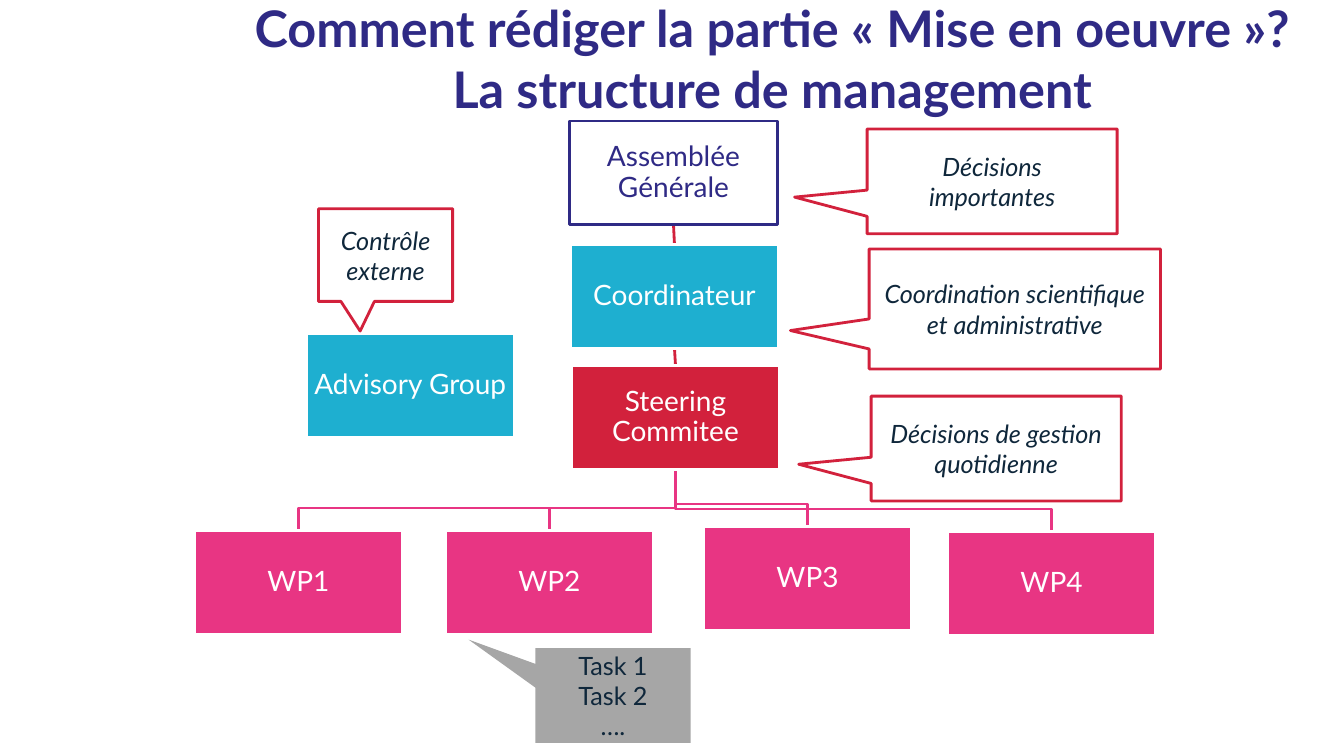
from pptx import Presentation
from pptx.dml.color import RGBColor
from pptx.enum.shapes import MSO_CONNECTOR as LINK, MSO_SHAPE as SHAPE
from pptx.enum.text import MSO_ANCHOR as ANCHOR, MSO_AUTO_SIZE as FIT, PP_ALIGN as ALIGN
from pptx.oxml.ns import qn
from pptx.util import Pt
from lxml.etree import SubElement

PX = 9144
FONT = "Lato"
WHITE = RGBColor(0xFF, 0xFF, 0xFF)
NAVY = RGBColor(0x2F, 0x2A, 0x85)
INK = RGBColor(0x0F, 0x27, 0x3B)
BLUE = RGBColor(0x1E, 0xAF, 0xD0)
RED = RGBColor(0xD2, 0x21, 0x3C)
PINK = RGBColor(0xE8, 0x35, 0x83)
GREY = RGBColor(0xA6, 0xA6, 0xA6)

BOX_W, BOX_H = 206, 103
DROP = 22


def px(*nums):
    return [n * PX for n in nums]


def write(shape, *lines, size=18, color=INK, bold=False, italic=False,
          space=1.0, inset=(10, 5)):
    frame = shape.text_frame
    frame.word_wrap = True
    frame.auto_size = FIT.NONE
    frame.vertical_anchor = ANCHOR.MIDDLE
    frame.margin_left = frame.margin_right = inset[0] * PX
    frame.margin_top = frame.margin_bottom = inset[1] * PX
    frame.text = "\n".join(lines)
    for para in frame.paragraphs:
        para.alignment = ALIGN.CENTER
        para.line_spacing = space
        para.space_before = para.space_after = Pt(0)
        for run in para.runs:
            font = run.font
            font.name, font.size = FONT, Pt(size)
            font.bold, font.italic = bold, italic
            font.color.rgb = color


def paint(shape, fill, edge):
    shape.shadow.inherit = False
    shape.fill.solid()
    shape.fill.fore_color.rgb = fill
    if edge is None:
        shape.line.fill.background()
    else:
        shape.line.color.rgb = edge
        shape.line.width = Pt(2)


def send_back(shape):
    shape.element.getparent().insert(2, shape.element)


def add_title(slide, left, top, width, height):
    title = slide.shapes.title
    title.left, title.top, title.width, title.height = px(left, top, width, height)
    write(title, "Comment rédiger la partie « Mise en oeuvre »?",
          "La structure de management", size=36, color=NAVY, bold=True)


def add_box(slide, left, top, label, fill, edge=WHITE, color=WHITE):
    box = slide.shapes.add_shape(SHAPE.RECTANGLE, *px(left, top, BOX_W, BOX_H))
    paint(box, fill, edge)
    write(box, label, size=20, color=color, space=0.9, inset=(1, 1))
    return box


def add_note(slide, area, tip, *lines, fill=WHITE, edge=RED, italic=True):
    note = slide.shapes.add_shape(SHAPE.RECTANGULAR_CALLOUT, *px(*area))
    note.adjustments[0], note.adjustments[1] = tip
    paint(note, fill, edge)
    write(note, *lines, italic=italic)


def join(slide, upper, lower):
    line = slide.shapes.add_connector(LINK.STRAIGHT, 0, 0, 0, 0)
    line.begin_connect(upper, 2)
    line.end_connect(lower, 0)
    line.line.color.rgb = RED
    line.line.width = Pt(2)
    SubElement(line.element.spPr, qn("a:effectLst"))
    send_back(line)


def branch(slide, upper, lower):
    start = upper.left + upper.width // 2
    end = lower.left + lower.width // 2
    bend = lower.top - DROP * PX
    path = slide.shapes.build_freeform(start, upper.top + upper.height)
    path.add_line_segments([(start, bend), (end, bend), (end, lower.top)], close=False)
    line = path.convert_to_shape()
    line.shadow.inherit = False
    line.fill.background()
    line.line.color.rgb = PINK
    line.line.width = Pt(2)
    send_back(line)


def add_chart_tree(slide, left, top):
    add_box(slide, left + 111, top + 211, "Advisory Group", BLUE)
    lead = add_box(slide, left + 373, top + 123, "Coordinateur", BLUE)
    board = add_box(slide, left + 372, top, "Assemblée Générale", WHITE, NAVY, NAVY)
    steer = add_box(slide, left + 374, top + 243, "Steering Commitee", RED)
    join(slide, board, lead)
    join(slide, lead, steer)
    spots = [(0, 406), (249, 406), (505, 402), (747, 407)]
    for num, (x, y) in enumerate(spots, 1):
        pack = add_box(slide, left + x, top + y, f"WP{num}", PINK)
        branch(slide, steer, pack)


def add_notes(slide):
    side = (-0.79, 0.15)
    add_note(slide, (316, 207, 133, 92), (-0.19, 0.82), "Contrôle externe")
    add_note(slide, (860, 128, 248, 104), side, "Décisions importantes")
    add_note(slide, (862, 247, 289, 119), (-0.77, 0.18),
             "Coordination scientifique et administrative")
    add_note(slide, (864, 393, 248, 104), side, "Décisions de gestion quotidienne")
    add_note(slide, (531, 643, 154, 94), (-0.93, -0.59), "Task 1", "Task 2", "….",
             fill=GREY, edge=None, italic=False)


def main():
    deck = Presentation()
    deck.slide_width, deck.slide_height = px(1333, 750)
    slide = deck.slides.add_slide(deck.slide_layouts[5])
    add_chart_tree(slide, 193, 120)
    add_notes(slide)
    add_title(slide, 165, 5, 1202, 105)
    deck.save("out.pptx")


if __name__ == "__main__":
    main()
